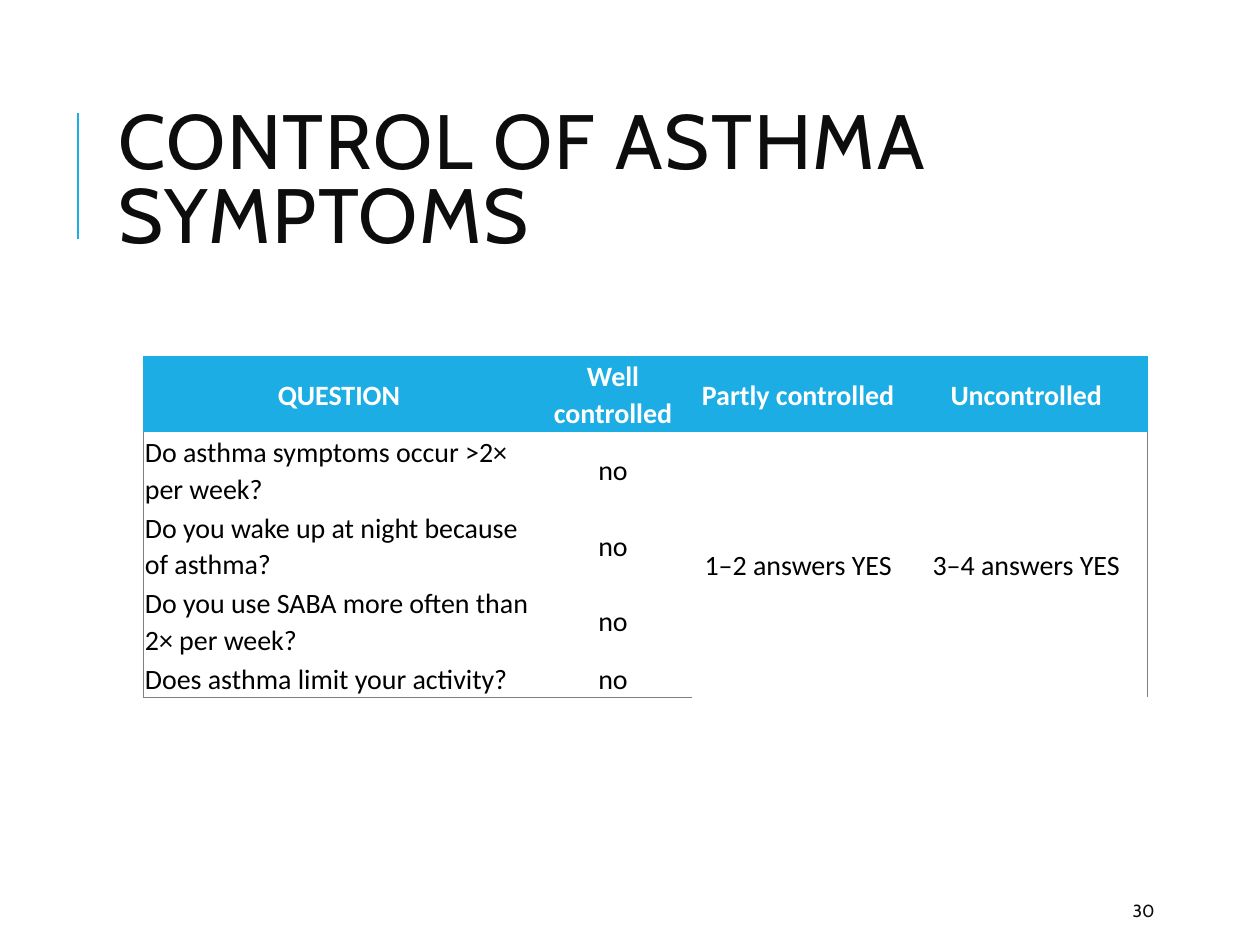
import pptx
import pptx.util
import pptx.dml.color
import pptx.enum.shapes
import pptx.enum.text
import pptx.oxml.ns
import lxml.etree

Inches, Pt = pptx.util.Inches, pptx.util.Pt
RGBColor = pptx.dml.color.RGBColor
PP_ALIGN = pptx.enum.text.PP_ALIGN
MIDDLE = pptx.enum.text.MSO_ANCHOR.MIDDLE
qn = pptx.oxml.ns.qn

BLUE = RGBColor(0x1C, 0xAD, 0xE4)
GRAY = RGBColor(0x7F, 0x7F, 0x7F)
INK = RGBColor(0x0D, 0x0D, 0x0D)
BLACK = RGBColor(0, 0, 0)
WHITE = RGBColor(0xFF, 0xFF, 0xFF)

COLUMN_WIDTHS = [3.1, 1.25, 1.69, 1.93]
ROW_HEIGHTS = [0.6, 0.6, 0.6, 0.6, 0.3]
ROWS = [
    ["QUESTION", "Well controlled", "Partly controlled", "Uncontrolled"],
    ["Do asthma symptoms occur >2× per week?", "no", "1–2 answers YES", "3–4 answers YES"],
    ["Do you wake up at night because of asthma?", "no"],
    ["Do you use SABA more often than 2× per week?", "no"],
    ["Does asthma limit your activity?", "no"],
]


def style_run(r, font, size, color, bold=False):
    """Set the font, size, colour and weight of a run."""
    r.font.name = font
    r.font.size = Pt(size)
    r.font.color.rgb = color
    r.font.bold = bold


def add_text(s, text, size, left, top, width, height):
    """Add a vertically centred, wrapping text box and return its paragraph."""
    tf = s.shapes.add_textbox(Inches(left), Inches(top), Inches(width), Inches(height)).text_frame
    tf.word_wrap = True
    tf.vertical_anchor = MIDDLE
    p = tf.paragraphs[0]
    p.text = text
    style_run(p.runs[0], "Cabin", size, INK)
    return p


def add_title(s, left, top, width, height):
    """Add the slide title with the accent rule to its left."""
    x = Inches(left - 0.22)
    rule = s.shapes.add_connector(pptx.enum.shapes.MSO_CONNECTOR.STRAIGHT,
                                  x, Inches(top + 1.26), x, Inches(top + 0.26))
    rule.line.color.rgb = BLUE
    rule.line.width = Pt(1.5)
    lxml.etree.SubElement(rule._element.spPr, qn("a:effectLst"))
    p = add_text(s, "CONTROL OF ASTHMA SYMPTOMS", 44, left, top, width, height)
    p.line_spacing = 0.8
    p.runs[0].font._element.set("spc", "100")


def set_borders(cell, outer_edges, color):
    """Draw the named outer edges of a cell and clear the others."""
    tcPr = cell._tc.get_or_add_tcPr()
    for i, edge in enumerate(["lnL", "lnR", "lnT", "lnB"]):
        ln = lxml.etree.Element(qn("a:" + edge), w=str(Pt(0.75)))
        if edge in outer_edges:
            fill = lxml.etree.SubElement(ln, qn("a:solidFill"))
            lxml.etree.SubElement(fill, qn("a:srgbClr"), val=str(color))
        else:
            lxml.etree.SubElement(ln, qn("a:noFill"))
        tcPr.insert(i, ln)


def style_cell(cell, row, col):
    """Format one table cell according to its place in the grid."""
    header = row == 0
    cell.margin_left = cell.margin_right = Inches(0.01)
    cell.margin_top = cell.margin_bottom = Inches(0.01)
    cell.vertical_anchor = MIDDLE
    if header:
        cell.fill.solid()
        cell.fill.fore_color.rgb = BLUE
    else:
        cell.fill.background()
    p = cell.text_frame.paragraphs[0]
    p.alignment = PP_ALIGN.CENTER if header or col else PP_ALIGN.LEFT
    p.line_spacing = 1.07
    for r in p.runs:
        style_run(r, "Calibri", 16, WHITE if header else BLACK, header)
    edges = {"lnL": col == 0, "lnR": col == len(COLUMN_WIDTHS) - 1,
             "lnT": header, "lnB": row == len(ROWS) - 1}
    set_borders(cell, [edge for edge, outer in edges.items() if outer], BLUE if header else GRAY)


def add_symptom_table(s, left, top):
    """Add the symptom control table at the given corner."""
    table = s.shapes.add_table(len(ROWS), len(COLUMN_WIDTHS), Inches(left), Inches(top),
                               Inches(sum(COLUMN_WIDTHS)), Inches(sum(ROW_HEIGHTS))).table
    table.horz_banding = False
    for column, width in zip(table.columns, COLUMN_WIDTHS):
        column.width = Inches(width)
    for table_row, height in zip(table.rows, ROW_HEIGHTS):
        table_row.height = Inches(height)
    for row, texts in enumerate(ROWS):
        for col, text in enumerate(texts):
            table.cell(row, col).text_frame.text = text
        for col in range(len(COLUMN_WIDTHS)):
            style_cell(table.cell(row, col), row, col)
    for col in (2, 3):
        table.cell(1, col).merge(table.cell(len(ROWS) - 1, col))


def main():
    """Build and save the slide."""
    prs = pptx.Presentation()
    prs.slide_width, prs.slide_height = Inches(10), Inches(7.5)
    s = prs.slides.add_slide(prs.slide_layouts[6])
    add_title(s, 0.84, 0.64, 7.97, 1.64)
    add_symptom_table(s, 1.14, 2.83)
    add_text(s, "30", 10, 8.89, 7.08, 0.8, 0.3)
    prs.save("out.pptx")


if __name__ == "__main__":
    main()
